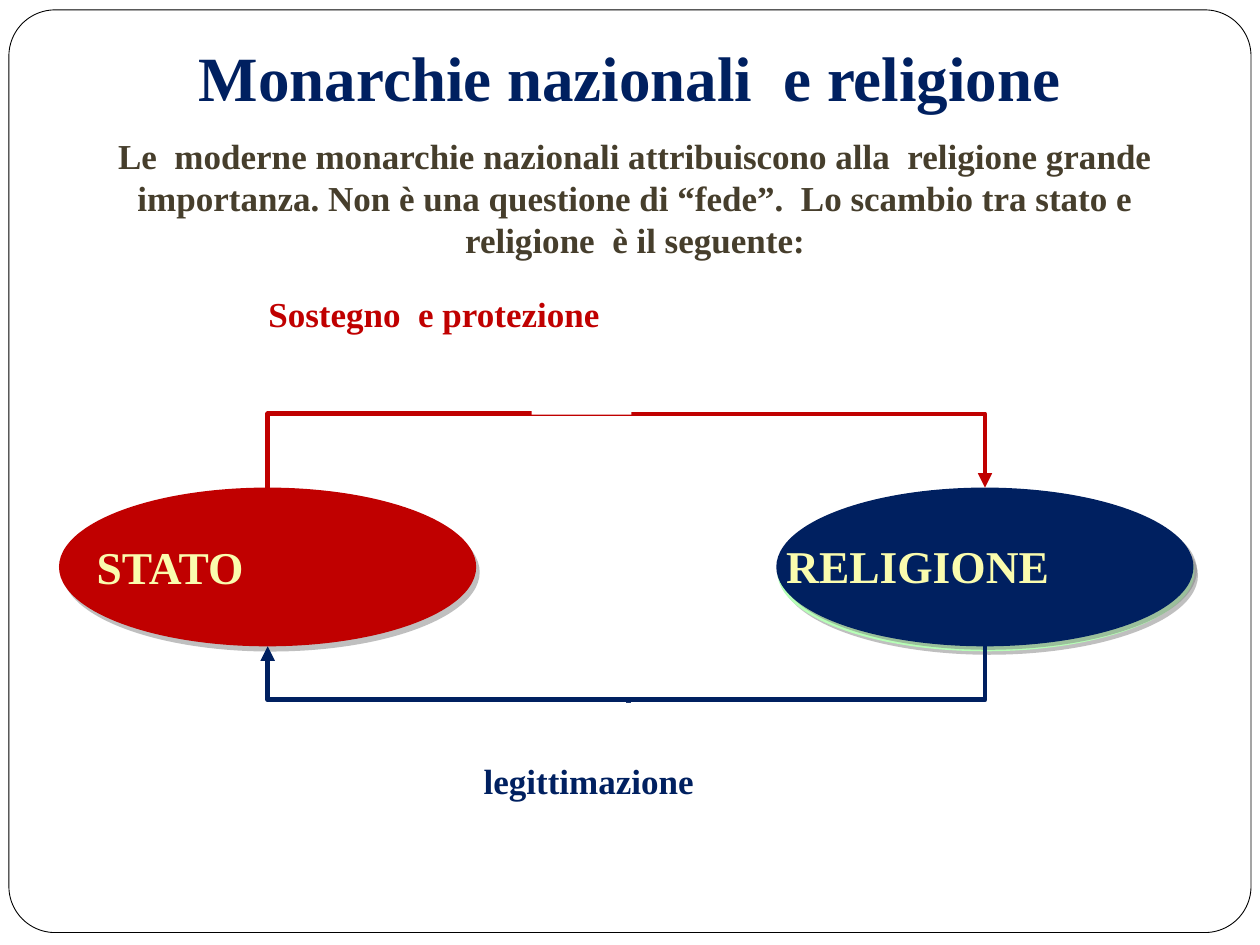
from lxml.etree import SubElement
from pptx import Presentation
from pptx.dml.color import RGBColor
from pptx.enum.shapes import MSO_CONNECTOR as Link, MSO_SHAPE as Shape
from pptx.enum.text import MSO_ANCHOR as Anchor, PP_ALIGN as Align
from pptx.oxml.ns import qn
from pptx.util import Cm, Pt

COLORS = {"red": "C00000", "navy": "002060", "brown": "463E2C", "cream": "FAFCAE",
          "mint": "B7FFB7", "gray": "808080", "white": "FFFFFF", "black": "000000"}
FONT = "Times New Roman"
OVAL_W, OVAL_H = 8.41, 3.2


def rgb(name):
    return RGBColor.from_string(COLORS[name])


def place(shape, box):
    for side, value in zip(("left", "top", "width", "height"), box):
        setattr(shape, side, Cm(value))


def write(holder, text, size, color, align=Align.LEFT):
    frame = holder.text_frame
    frame.word_wrap = True
    frame.vertical_anchor = Anchor.TOP
    frame.text = text
    paragraph = frame.paragraphs[0]
    paragraph.alignment = align
    font_format = {"name": FONT, "size": Pt(size), "bold": True}
    for attribute, value in font_format.items():
        setattr(paragraph.runs[0].font, attribute, value)
    paragraph.runs[0].font.color.rgb = rgb(color)


def add_label(slide, box, *text_format):
    write(slide.shapes.add_textbox(*map(Cm, box)), *text_format)


def add_filled(slide, kind, box, fill):
    shape = slide.shapes.add_shape(kind, *map(Cm, box))
    shape.shadow.inherit = False
    shape.fill.solid()
    shape.fill.fore_color.rgb = rgb(fill)
    shape.line.fill.background()
    return shape


def add_oval(slide, left, top, fill, distance, angle):
    """Ellipse with a hard, half-transparent shadow."""
    oval = add_filled(slide, Shape.OVAL, (left, top, OVAL_W, OVAL_H), fill)
    effects = oval._element.spPr.find(qn("a:effectLst"))
    shadow = SubElement(effects, qn("a:outerShdw"), blurRad="0", dist=str(Pt(distance)),
                        dir=str(angle * 60000), algn="ctr", rotWithShape="0")
    tint = SubElement(shadow, qn("a:srgbClr"), val=COLORS["gray"])
    SubElement(tint, qn("a:alpha"), val="50000")


def add_elbow(slide, start, end, color, arrow=None):
    """Elbow that leaves start vertically; a quarter turn of the usual one."""
    (x1, y1), (x2, y2) = start, end
    rightward, upward = x2 > x1, y2 < y1
    half_w, half_h = abs(y2 - y1) / 2, abs(x2 - x1) / 2
    mid_x, mid_y = (x1 + x2) / 2, (y1 + y2) / 2
    flip_x = -1 if rightward else 1
    flip_y = -1 if rightward and upward else 1
    elbow = slide.shapes.add_connector(
        Link.ELBOW, Cm(mid_x - flip_x * half_w), Cm(mid_y - flip_y * half_h),
        Cm(mid_x + flip_x * half_w), Cm(mid_y + flip_y * half_h))
    properties = elbow._element.spPr
    quarter_turn = 270 if rightward and not upward else 90
    properties.find(qn("a:xfrm")).set("rot", str(quarter_turn * 60000))
    elbow.line.width = Pt(2.75)
    elbow.line.color.rgb = rgb(color)
    if arrow:
        SubElement(elbow.line._get_or_add_ln(), qn(f"a:{arrow}"), type="triangle")
    SubElement(properties, qn("a:effectLst"))


def add_frame(slide, box):
    frame = add_filled(slide, Shape.ROUNDED_RECTANGLE, box, "white")
    frame.adjustments[0] = 0.05
    frame.line.width = Pt(0.5)
    frame.line.color.rgb = rgb("black")
    slide.shapes._spTree.insert(2, frame._element)  # behind the title


def add_heading(slide, left, top, width):
    title = slide.shapes.title
    place(title, (left, top, width, 1.8))
    write(title, "Monarchie nazionali  e religione", 36, "navy", Align.CENTER)
    add_label(slide, (left + 1.4, top + 1.95, width - 2.59, 2.82),
              "Le  moderne monarchie nazionali attribuiscono alla  religione grande "
              "importanza. Non è una questione di “fede”.  Lo scambio tra stato e "
              "religione  è il seguente:", 20, "brown", Align.CENTER)


def add_exchange(slide, left, top, width):
    """State and religion ovals, with what each gives the other."""
    religion_left = left + width - OVAL_W
    state_x, religion_x = left + OVAL_W / 2, religion_left + OVAL_W / 2
    bottom = top + OVAL_H
    add_oval(slide, religion_left + 0.02, top + 0.1, "mint", 2.8, 45)
    add_oval(slide, left, top, "red", 3.6, 56)
    add_oval(slide, religion_left, top, "navy", 2.8, 45)
    add_label(slide, (left + 0.51, top + 0.91, 7.59, 1.35), "STATO", 26, "cream")
    add_label(slide, (religion_left - 0.05, top + 0.89, 9.8, 1.35),
              "RELIGIONE", 26, "cream")
    add_label(slide, (left + 3.97, top - 4.06, 12.7, 1.12),
              "Sostegno  e protezione", 20, "red")
    add_label(slide, (left + 8.31, bottom + 2.16, 6.32, 1.09),
              "legittimazione", 20, "navy")

    support = (left + 10.32, top - 2.97)
    legitimacy = (left + 11.48, bottom + 2.16)
    add_elbow(slide, (religion_x, bottom), legitimacy, "navy")
    add_elbow(slide, (state_x, top), support, "red")
    add_elbow(slide, support, (religion_x, top), "red", "tailEnd")
    add_elbow(slide, (state_x, bottom), legitimacy, "navy", "headEnd")

    # White covers over the stubs where the elbows meet
    for cover in ((left + 10.11, bottom + 1.14, 2.41, 1.04),
                  (left + 9.53, top - 3.07, 2.01, 1.6)):
        add_filled(slide, Shape.RECTANGLE, cover, "white")


def main():
    deck = Presentation()
    deck.slide_width, deck.slide_height = Cm(25.4), Cm(19.05)
    slide = deck.slides.add_slide(deck.slide_layouts[5])
    add_frame(slide, (0.18, 0.2, 25.04, 18.6))
    add_heading(slide, 0, 0.64, 25.4)
    add_exchange(slide, 1.19, 9.83, 22.87)
    deck.save("out.pptx")


if __name__ == "__main__":
    main()
